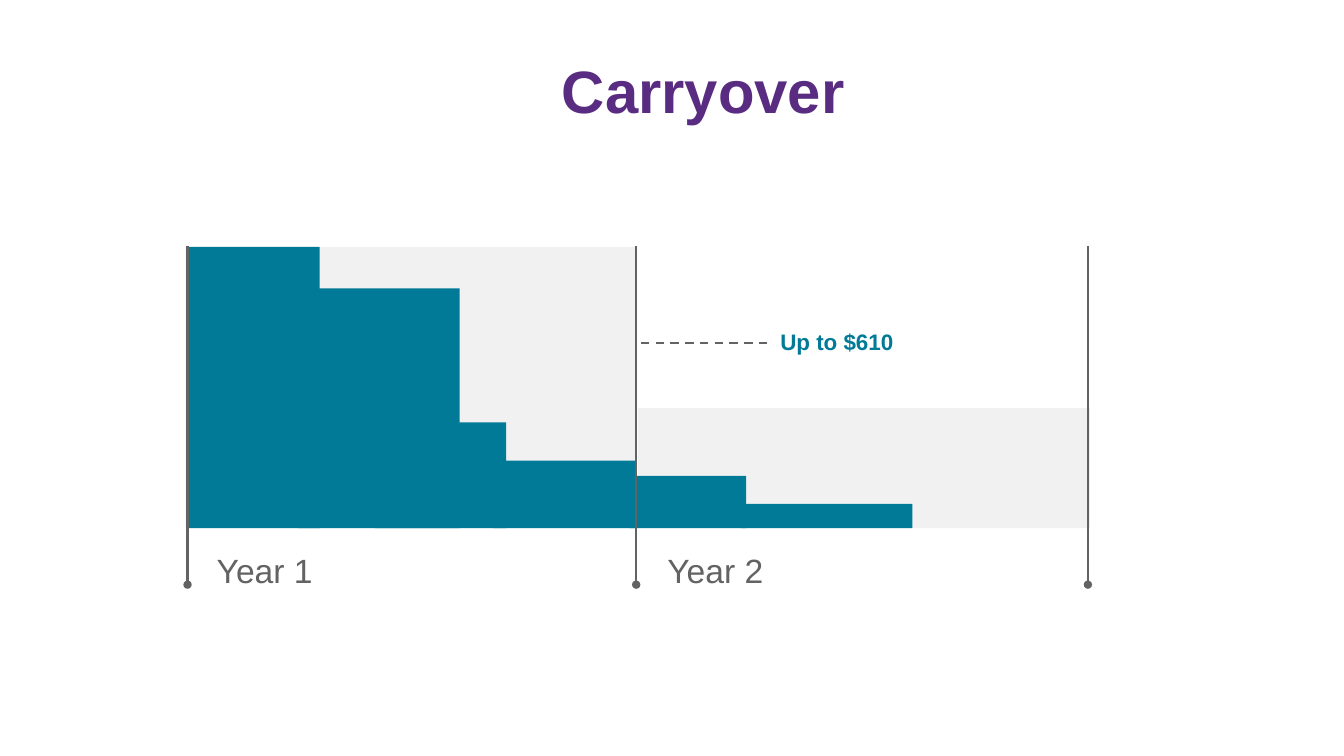
from dataclasses import dataclass

from lxml.etree import SubElement
from pptx import Presentation
from pptx.dml.color import RGBColor
from pptx.enum.dml import MSO_LINE
from pptx.enum.shapes import MSO_CONNECTOR, MSO_SHAPE
from pptx.enum.text import MSO_AUTO_SIZE, PP_ALIGN
from pptx.oxml.ns import qn
from pptx.util import Emu, Pt

EMU_PER_PX = 9144


@dataclass(frozen=True)
class Theme:
    font: str = "Arial"
    purple: str = "592C82"
    teal: str = "007A96"
    gray: str = "626362"
    pale: str = "F1F1F2"
    title_size: float = 42.7
    year_size: float = 24
    note_size: float = 16
    line_width: float = 1.5


THEME = Theme()
BASELINE = 524
MARKER_TOP, MARKER_BOTTOM = 244, 580
YEAR_ENDS = (186, 631, 1079)
YEARS = (
    {
        "label": ("Year 1", 202, 436),
        "allowance": (184, 448, 279),
        "balances": ((187, 130, 279), (296, 160, 238), (372, 130, 105), (489, 141, 67)),
    },
    {
        "label": ("Year 2", 649, 400),
        "allowance": (633, 448, 119),
        "balances": ((625, 115, 52), (735, 170, 24)),
    },
)


def px(length):
    return Emu(length * EMU_PER_PX)


def add_text(slide, text, *, left, top, width, height, size, color,
             bold=False, align=PP_ALIGN.LEFT):
    frame = slide.shapes.add_textbox(px(left), px(top), px(width), px(height)).text_frame
    frame.word_wrap = True
    frame.auto_size = MSO_AUTO_SIZE.SHAPE_TO_FIT_TEXT
    frame.margin_left = frame.margin_right = px(13)
    frame.margin_top = frame.margin_bottom = px(13)
    paragraph = frame.paragraphs[0]
    paragraph.alignment = align
    run = paragraph.add_run()
    run.text = text
    run.font.name = THEME.font
    run.font.size = Pt(size)
    run.font.bold = bold
    run.font.color.rgb = RGBColor.from_string(color)


def add_block(slide, left, width, height, color, preset=MSO_SHAPE.RECTANGLE):
    block = slide.shapes.add_shape(
        preset, px(left), px(BASELINE - height), px(width), px(height))
    block.shadow.inherit = False
    block.fill.solid()
    block.fill.fore_color.rgb = RGBColor.from_string(color)
    block.line.fill.background()
    return block


def add_line(slide, start, end, dashed=False, dot=False):
    rule = slide.shapes.add_connector(
        MSO_CONNECTOR.STRAIGHT, *(px(value) for value in start + end))
    rule.line.color.rgb = RGBColor.from_string(THEME.gray)
    rule.line.width = Pt(THEME.line_width)
    if dashed:
        rule.line.dash_style = MSO_LINE.DASH
    properties = rule._element.spPr
    if dot:
        SubElement(properties.find(qn("a:ln")), qn("a:tailEnd"), type="oval")
    SubElement(properties, qn("a:effectLst"))


def add_year(slide, label, allowance, balances):
    plate = add_block(slide, *allowance, THEME.pale, MSO_SHAPE.PENTAGON)
    plate.adjustments[0] = 0
    text, left, width = label
    add_text(slide, text, left=left, top=533, width=width, height=67,
             size=THEME.year_size, color=THEME.gray)
    for balance in balances:
        add_block(slide, *balance, THEME.teal)


def main():
    deck = Presentation()
    deck.slide_width, deck.slide_height = px(1333), px(750)
    slide = deck.slides.add_slide(deck.slide_layouts[6])
    add_text(slide, "Carryover", left=493, top=40, width=409, height=99,
             size=THEME.title_size, color=THEME.purple, bold=True,
             align=PP_ALIGN.CENTER)
    for year in YEARS:
        add_year(slide, **year)
    add_line(slide, (761, 340), (YEAR_ENDS[1], 340), dashed=True)
    add_text(slide, "Up to $610", left=761, top=313, width=342, height=54,
             size=THEME.note_size, color=THEME.teal, bold=True)
    for year_end in YEAR_ENDS:
        add_line(slide, (year_end, MARKER_TOP), (year_end, MARKER_BOTTOM), dot=True)
    deck.save("out.pptx")


if __name__ == "__main__":
    main()
